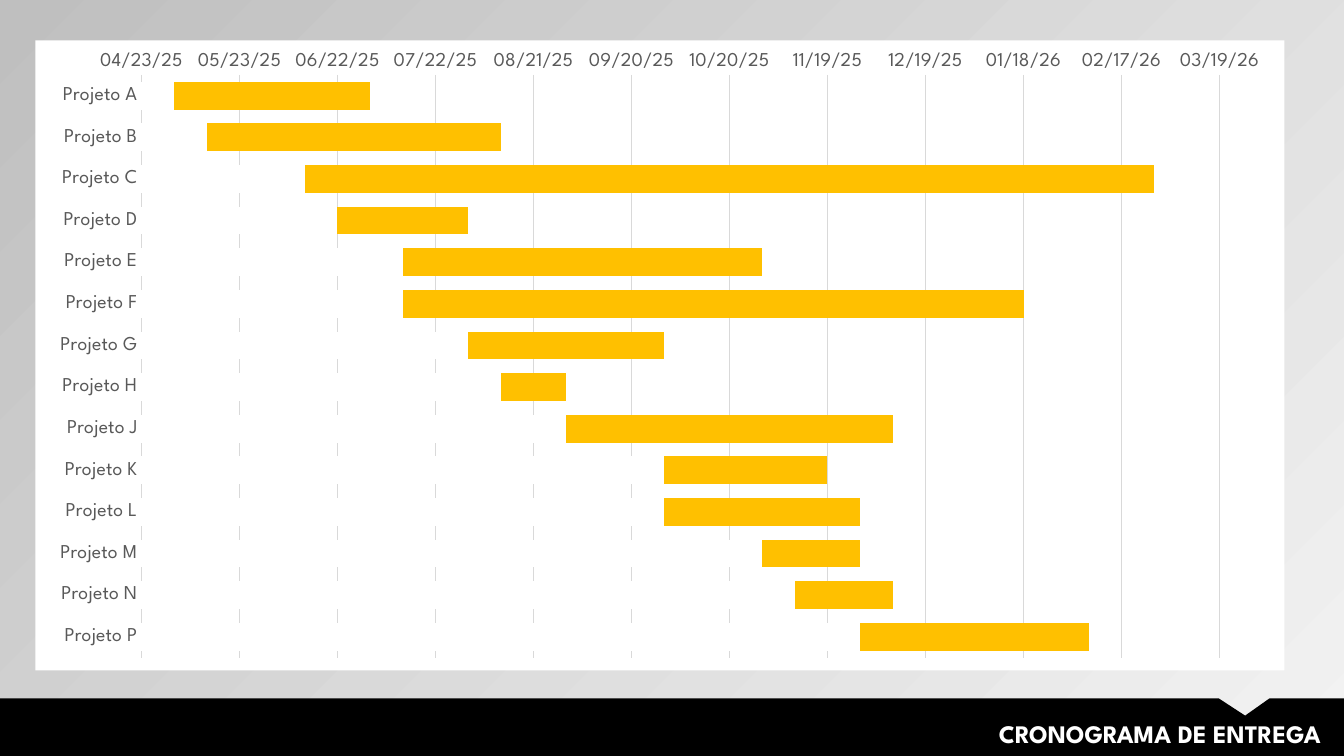
from lxml.etree import fromstring
from pptx import Presentation
from pptx.chart.data import CategoryChartData as ChartData
from pptx.dml.color import RGBColor as Color
from pptx.enum.chart import (XL_AXIS_CROSSES as Crosses, XL_CHART_TYPE as ChartType,
                             XL_TICK_MARK as TickMark)
from pptx.enum.text import MSO_AUTO_SIZE as AutoSize, PP_ALIGN as Align
from pptx.util import Inches, Pt

COLORS = {
    "black": "000000",
    "white": "FFFFFF",
    "bar": "FFC000",
    "label": "595959",
    "grid": "D9D9D9",
    "light": "F2F2F2",
    "dark": "BFBFBF",
}
CHART_NS = ('xmlns:c="http://schemas.openxmlformats.org/drawingml/2006/chart" '
            'xmlns:a="http://schemas.openxmlformats.org/drawingml/2006/main"')

# Project: (start, end) as spreadsheet day numbers
SCHEDULE = {
    "Projeto A": (45780, 45840),
    "Projeto B": (45790, 45880),
    "Projeto C": (45820, 46080),
    "Projeto D": (45830, 45870),
    "Projeto E": (45850, 45960),
    "Projeto F": (45850, 46040),
    "Projeto G": (45870, 45930),
    "Projeto H": (45880, 45900),
    "Projeto J": (45900, 46000),
    "Projeto K": (45930, 45980),
    "Projeto L": (45930, 45990),
    "Projeto M": (45960, 45990),
    "Projeto N": (45970, 46000),
    "Projeto P": (45990, 46060),
}
FIRST_DAY, LAST_DAY, DAY_STEP = 45770, 46100, 30


def color(name):
    return Color.from_string(COLORS[name])


def format_font(font, size=14, tone="label", bold=False, name="League Spartan"):
    font.name, font.size, font.bold = name, Pt(size), bold
    font.color.rgb = color(tone)


def add_text(para, text, align=Align.LEFT, **style):
    para.alignment = align
    span = para.add_run()
    span.text = text
    format_font(span.font, **style)


class SlideBuilder:
    def __init__(self, deck):
        self.page = deck.slides.add_slide(deck.slide_layouts[6])
        self.shapes = self.page.shapes

    def background(self, stops, angle):
        fill = self.page.background.fill
        fill.gradient()
        fill.gradient_angle = angle
        for stop, (position, tone) in zip(fill.gradient_stops, stops):
            stop.position = position
            stop.color.rgb = color(tone)

    def outline(self, points, tone):
        corners = [(Inches(x), Inches(y)) for x, y in points]
        builder = self.shapes.build_freeform(*corners[0])
        builder.add_line_segments(corners[1:], close=True)
        shape = builder.convert_to_shape()
        shape.shadow.inherit = False
        shape.fill.solid()
        shape.fill.fore_color.rgb = color(tone)
        shape.line.fill.background()

    def text(self, area, text, **style):
        box = self.shapes.add_textbox(*map(Inches, area))
        frame = box.text_frame
        frame.word_wrap = True
        frame.auto_size = AutoSize.SHAPE_TO_FIT_TEXT
        add_text(frame.paragraphs[0], text, **style)

    def gantt(self, area, schedule, plot_area):
        data = ChartData()
        data.categories = list(schedule)
        starts, ends = zip(*schedule.values())
        data.add_series("Series 1", ends)
        data.add_series("Series 2", starts)
        chart = self.shapes.add_chart(
            ChartType.BAR_CLUSTERED, *map(Inches, area), data).chart
        chart.has_legend = chart.has_title = False
        format_font(chart.font, tone="black")

        # White start bars cover the front part of the end bars
        plot = chart.plots[0]
        plot.gap_width, plot.overlap = 50, 100
        plot.vary_by_categories = False
        for series, tone in zip(plot.series, ("bar", "white")):
            series.invert_if_negative = False
            series.format.fill.solid()
            series.format.fill.fore_color.rgb = color(tone)

        # Axes
        projects, dates = chart.category_axis, chart.value_axis
        for axis in (projects, dates):
            axis.major_tick_mark = axis.minor_tick_mark = TickMark.NONE
            format_font(axis.tick_labels.font)
        projects.reverse_order = True
        dates.minimum_scale, dates.maximum_scale = FIRST_DAY, LAST_DAY
        dates.major_unit = DAY_STEP
        dates.crosses = Crosses.MINIMUM
        dates.tick_labels.number_format = "mm/dd/yy;@"
        dates.tick_labels.number_format_is_linked = False
        dates.format.line.fill.background()
        for line in (projects.format.line, dates.major_gridlines.format.line):
            line.color.rgb = color("grid")
            line.width = Pt(0.75)

        self.chart_frame(chart, plot_area)

    def chart_frame(self, chart, plot_area):
        space = chart._chartSpace
        chart_node = space.find("{*}chart")
        chart_node.addnext(fromstring(
            f'<c:spPr {CHART_NS}><a:solidFill><a:srgbClr val="{COLORS["white"]}"/>'
            '</a:solidFill><a:ln><a:noFill/></a:ln></c:spPr>'))
        plot_node = chart_node.find("{*}plotArea")
        for layout in plot_node.findall("{*}layout"):
            plot_node.remove(layout)
        sizes = "".join(f'<c:{key} val="{value}"/>'
                        for key, value in zip("xywh", plot_area))
        plot_node.insert(0, fromstring(
            f'<c:layout {CHART_NS}><c:manualLayout><c:layoutTarget val="inner"/>'
            '<c:xMode val="edge"/><c:yMode val="edge"/>'
            f'{sizes}</c:manualLayout></c:layout>'))


def main():
    deck = Presentation()
    deck.slide_width, deck.slide_height = Inches(13.33), Inches(7.5)
    slide = SlideBuilder(deck)
    slide.background([(0, "light"), (1, "dark")], angle=135)

    # Footer band with a notch above the title
    slide.outline([(0, 6.93), (12.09, 6.93), (12.35, 7.1), (12.59, 6.93),
                   (13.33, 6.93), (13.33, 7.5), (0, 7.5)], "black")
    slide.text((4.14, 7.08, 9.06, 0.4), "CRONOGRAMA DE ENTREGA",
               align=Align.RIGHT, size=18, tone="white", bold=True)

    # Delivery schedule
    slide.gantt((0.35, 0.4, 12.39, 6.25), SCHEDULE,
                plot_area=(0.085, 0.055, 0.863, 0.925))
    deck.save("out.pptx")


if __name__ == "__main__":
    main()
